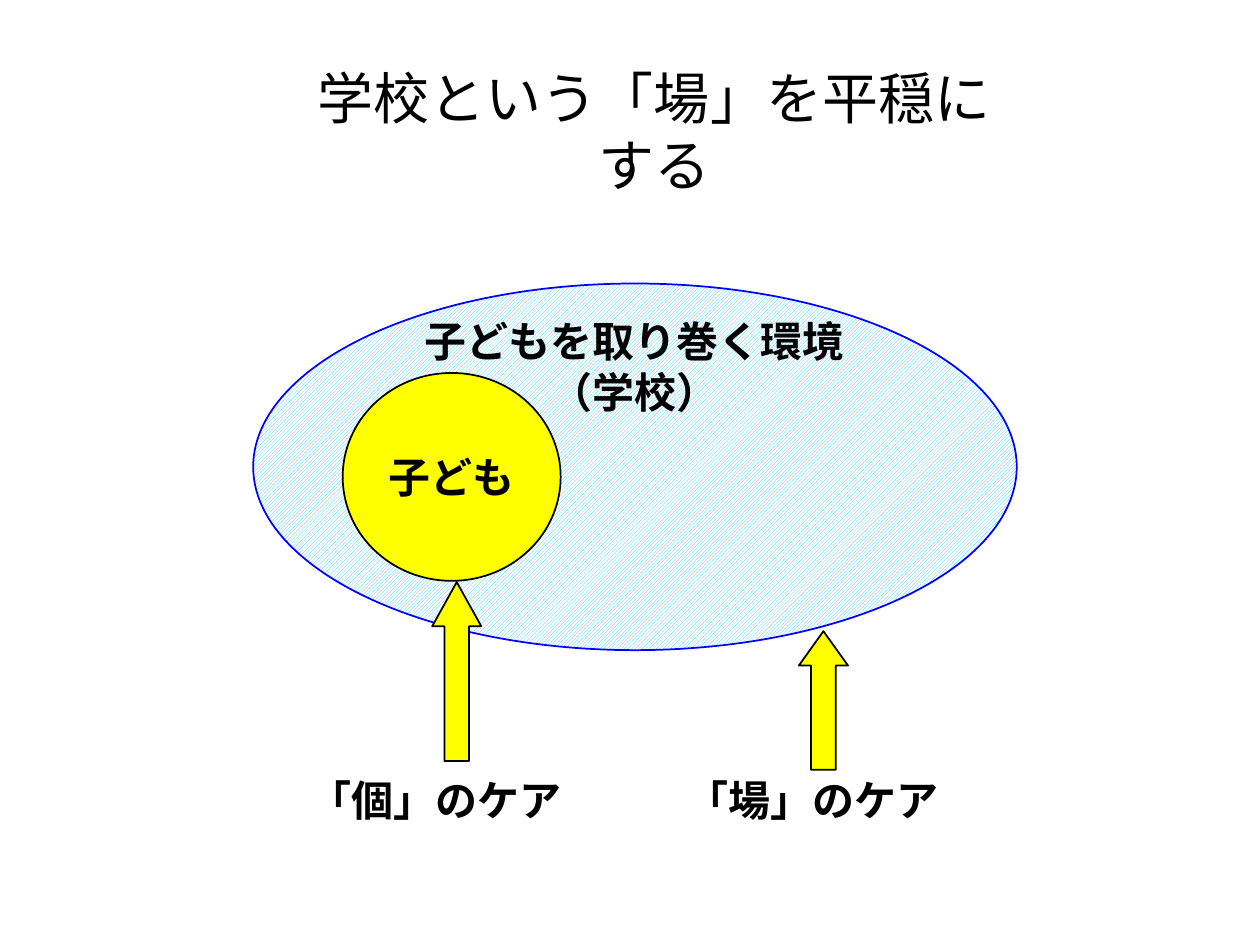
from pptx import Presentation
from pptx.dml.color import RGBColor
from pptx.enum.dml import MSO_PATTERN as Pattern
from pptx.enum.shapes import MSO_SHAPE as Preset
from pptx.enum.text import MSO_ANCHOR as Anchor, MSO_AUTO_SIZE as AutoSize, PP_ALIGN as Align
from pptx.util import Inches, Pt

BLACK, YELLOW, BLUE = "000000", "FFFF00", "0000FF"
SKY, WHITE = "33CCFF", "FFFFFF"
TITLE = "学校という「場」を平穏にする"


def color(value):
    return RGBColor.from_string(value)


def inches(box):
    return [Inches(value) for value in box]


def write(shape, text, size=24, font="Times New Roman", bold=True,
          anchor=Anchor.MIDDLE, wrap=True, inset=0.04, top=None):
    frame = shape.text_frame
    frame.auto_size = AutoSize.NONE
    frame.word_wrap = wrap
    frame.vertical_anchor = anchor
    frame.margin_left = frame.margin_right = frame.margin_bottom = Inches(inset)
    frame.margin_top = Inches(inset if top is None else top)
    frame.text = text
    for para in frame.paragraphs:
        para.alignment = Align.CENTER
        for span in para.runs:
            span.font.name = font
            span.font.size = Pt(size)
            span.font.bold = bold
            span.font.color.rgb = color(BLACK)


def add_preset(page, preset, box, fill=YELLOW, line=BLACK):
    shape = page.shapes.add_shape(preset, *inches(box))
    shape.shadow.inherit = False
    shape.fill.solid()
    shape.fill.fore_color.rgb = color(fill)
    shape.line.color.rgb = color(line)
    shape.line.width = Pt(1)
    return shape


def add_title(page, box):
    title = page.shapes.title
    title.left, title.top, title.width, title.height = inches(box)
    write(title, TITLE, size=32, font="Arial", bold=False, inset=0.05)
    title.text_frame.margin_left = title.text_frame.margin_right = Inches(0.1)


def add_environment(page, box):
    left, top, width, height = box
    school = add_preset(page, Preset.OVAL, box, line=BLUE)
    school.fill.patterned()
    school.fill.pattern = Pattern.DARK_UPWARD_DIAGONAL
    school.fill.fore_color.rgb = color(SKY)
    school.fill.back_color.rgb = color(WHITE)
    write(school, "子どもを取り巻く環境\n（学校）", anchor=Anchor.TOP, wrap=False, top=-0.17)
    child = add_preset(page, Preset.OVAL, (left + 0.71, top + 0.71, 1.73, 1.65))
    write(child, "子ども", wrap=False)


def add_care(page, box, text, arrow_left, arrow_top, arrow_height, head):
    arrow = add_preset(page, Preset.UP_ARROW, (arrow_left, arrow_top, 0.39, arrow_height))
    arrow.adjustments[0] = 0.5
    arrow.adjustments[1] = head
    write(page.shapes.add_textbox(*inches(box)), text, anchor=Anchor.TOP)


def main():
    deck = Presentation()
    deck.slide_width, deck.slide_height = Inches(10), Inches(7.5)
    page = deck.slides.add_slide(deck.slide_layouts[5])
    add_title(page, (2.32, 0.6, 5.75, 0.87))
    add_environment(page, (2.01, 2.25, 6.06, 2.91))
    add_care(page, (2.32, 6.11, 2.28, 0.48), "「個」のケア", 3.43, 4.62, 1.42, 0.9)
    add_care(page, (5.31, 6.11, 2.28, 0.48), "「場」のケア", 6.34, 5.01, 1.1, 0.7)
    deck.save("out.pptx")


if __name__ == "__main__":
    main()
